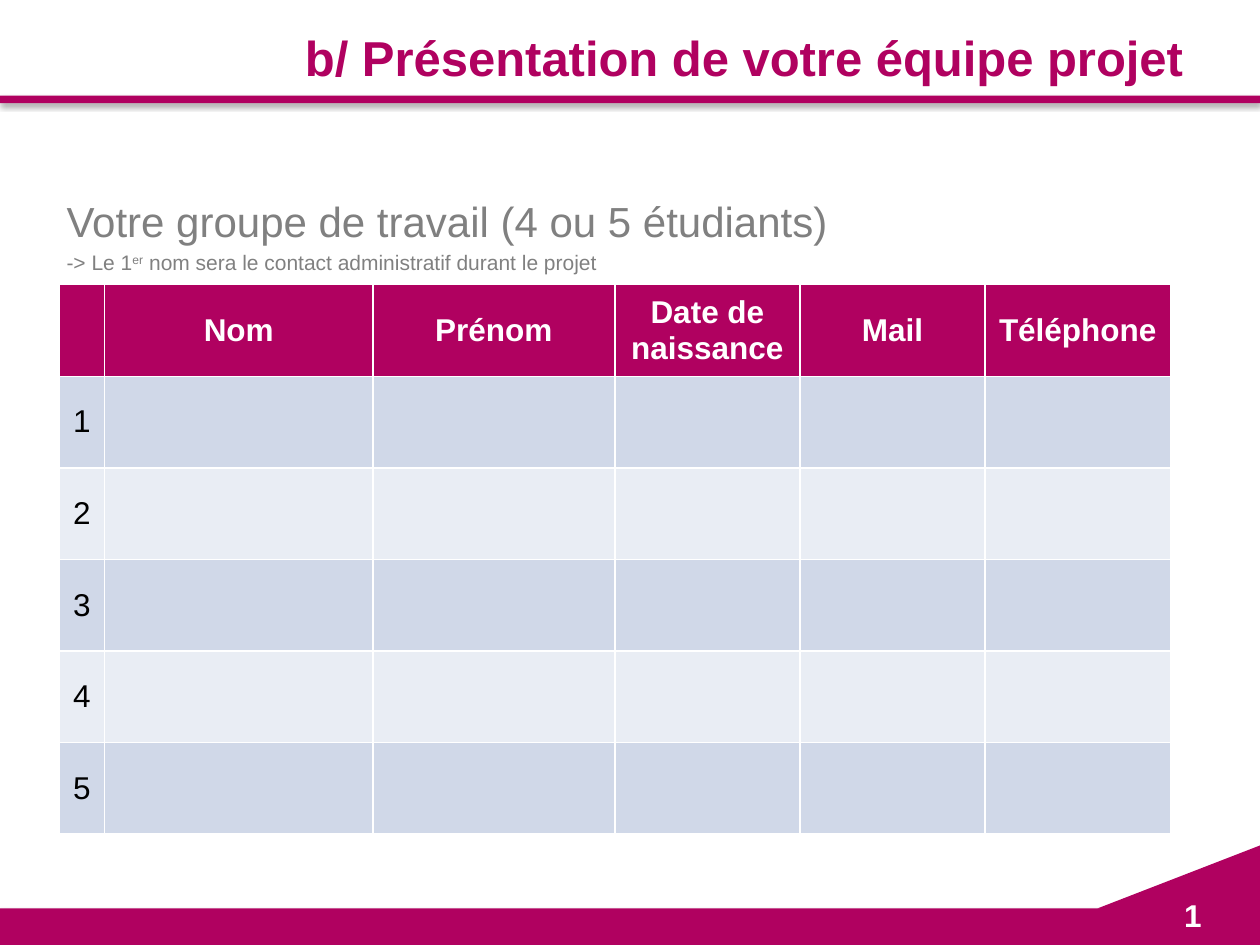
from dataclasses import dataclass

from lxml import etree
from pptx import Presentation
from pptx import util as u
from pptx.dml.color import RGBColor
from pptx.enum import shapes, text
from pptx.oxml import ns


@dataclass(frozen=True)
class Theme:
    font: str = "Arial"
    accent: str = "B00160"
    white: str = "FFFFFF"
    black: str = "000000"
    grey: str = "808080"
    bands: tuple = ("D0D8E8", "E9EDF4")
    title: float = 28
    heading: float = 24
    note: float = 12
    body: float = 18


theme = Theme()


def write(para, words, size, color, bold=False, align=None, raised=False):
    span = para.add_run()
    span.text = words
    span.font.name = theme.font
    span.font.size = u.Pt(size)
    span.font.bold = bold
    span.font.color.rgb = RGBColor.from_string(color)
    if raised:
        span.font._element.set("baseline", "30000")
    if align is not None:
        para.alignment = align


def add_shadow(shape):
    effects = etree.SubElement(shape._element.spPr, ns.qn("a:effectLst"))
    shadow = etree.SubElement(
        effects, ns.qn("a:outerShdw"), blurRad=str(u.Pt(3.1)),
        dist=str(u.Pt(1.8)), dir="5400000", rotWithShape="0")
    tint = etree.SubElement(shadow, ns.qn("a:srgbClr"), val=theme.black)
    etree.SubElement(tint, ns.qn("a:alpha"), val="35000")


deck = Presentation()
deck.slide_width = u.Inches(10)
deck.slide_height = u.Inches(7.5)
page = deck.slides.add_slide(deck.slide_layouts[5])

for top, height in ((7.21, 0.29), (0.76, 0.06)):
    bar = page.shapes.add_shape(
        shapes.MSO_SHAPE.RECTANGLE, 0, u.Inches(top), u.Inches(10), u.Inches(height))
    bar.fill.solid()
    bar.fill.fore_color.rgb = RGBColor.from_string(theme.accent)
    bar.line.fill.background()
    add_shadow(bar)

outline = page.shapes.build_freeform(u.Inches(8.71), u.Inches(7.21))
outline.add_line_segments(
    [(u.Inches(10), u.Inches(6.71)), (u.Inches(10), u.Inches(7.4))], close=True)
corner = outline.convert_to_shape()
corner.fill.solid()
corner.fill.fore_color.rgb = RGBColor.from_string(theme.accent)
corner.line.fill.background()
corner.shadow.inherit = False

title = page.shapes.title
title.left, title.top = u.Inches(1.38), u.Inches(0.07)
title.width, title.height = u.Inches(8.11), u.Inches(0.77)
title.text_frame.auto_size = text.MSO_AUTO_SIZE.NONE
title.text_frame.vertical_anchor = text.MSO_ANCHOR.MIDDLE
write(title.text_frame.paragraphs[0], "b/ Présentation de votre équipe projet",
      theme.title, theme.accent, bold=True, align=text.PP_ALIGN.RIGHT)

number = page.shapes.add_textbox(
    u.Inches(9.3), u.Inches(7.06), u.Inches(0.34), u.Inches(0.4))
number.text_frame.word_wrap = False
write(number.text_frame.paragraphs[0], "1", theme.body, theme.white, bold=True)

intro = page.shapes.add_textbox(
    u.Inches(0.43), u.Inches(1.5), u.Inches(8.87), u.Inches(0.63))
intro.text_frame.word_wrap = True
write(intro.text_frame.paragraphs[0], "Votre groupe de travail (4 ou 5 étudiants)",
      theme.heading, theme.grey)
note = intro.text_frame.add_paragraph()
note.space_before = u.Pt(2.4)
write(note, "-> Le 1", theme.note, theme.grey)
write(note, "er", theme.note, theme.grey, raised=True)
write(note, " nom sera le contact administratif durant le projet",
      theme.note, theme.grey)

headers = ("", "Nom", "Prénom", "Date de naissance", "Mail", "Téléphone")
widths = (0.36, 2.13, 1.92, 1.47, 1.47, 1.47)
members = 5
team = page.shapes.add_table(
    members + 1, len(headers), u.Inches(0.47), u.Inches(2.26),
    u.Inches(sum(widths)), u.Inches(4.36)).table
for column, width in zip(team.columns, widths):
    column.width = u.Inches(width)

for row in range(members + 1):
    is_header = row == 0
    labels = headers if is_header else (str(row),) + ("",) * (len(headers) - 1)
    fill = theme.accent if is_header else theme.bands[(row - 1) % 2]
    for column, label in enumerate(labels):
        cell = team.cell(row, column)
        cell.fill.solid()
        cell.fill.fore_color.rgb = RGBColor.from_string(fill)
        cell.vertical_anchor = text.MSO_ANCHOR.MIDDLE
        if label:
            write(cell.text_frame.paragraphs[0], label, theme.body,
                  theme.white if is_header else theme.black,
                  bold=is_header, align=text.PP_ALIGN.CENTER)

deck.save("out.pptx")
